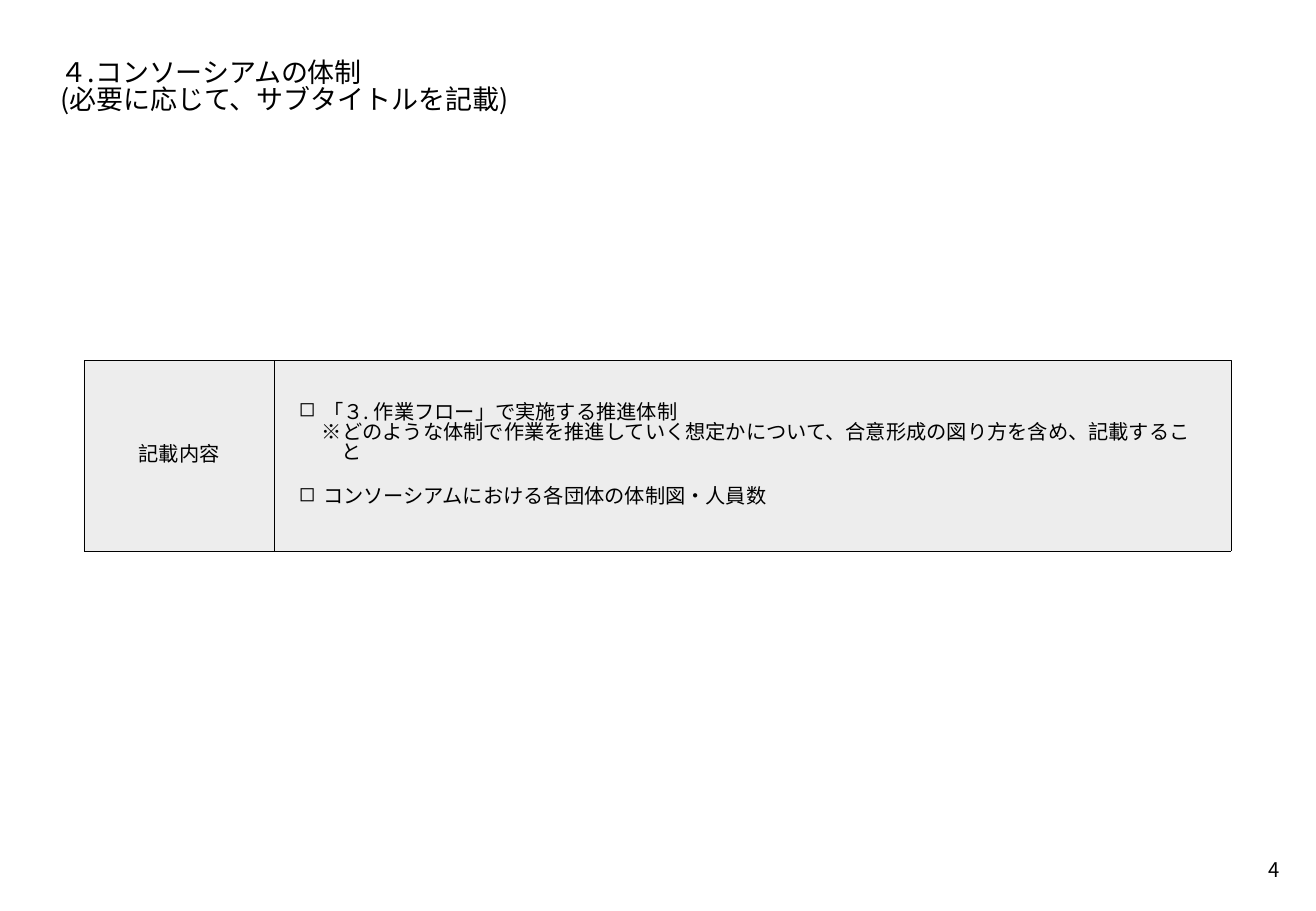
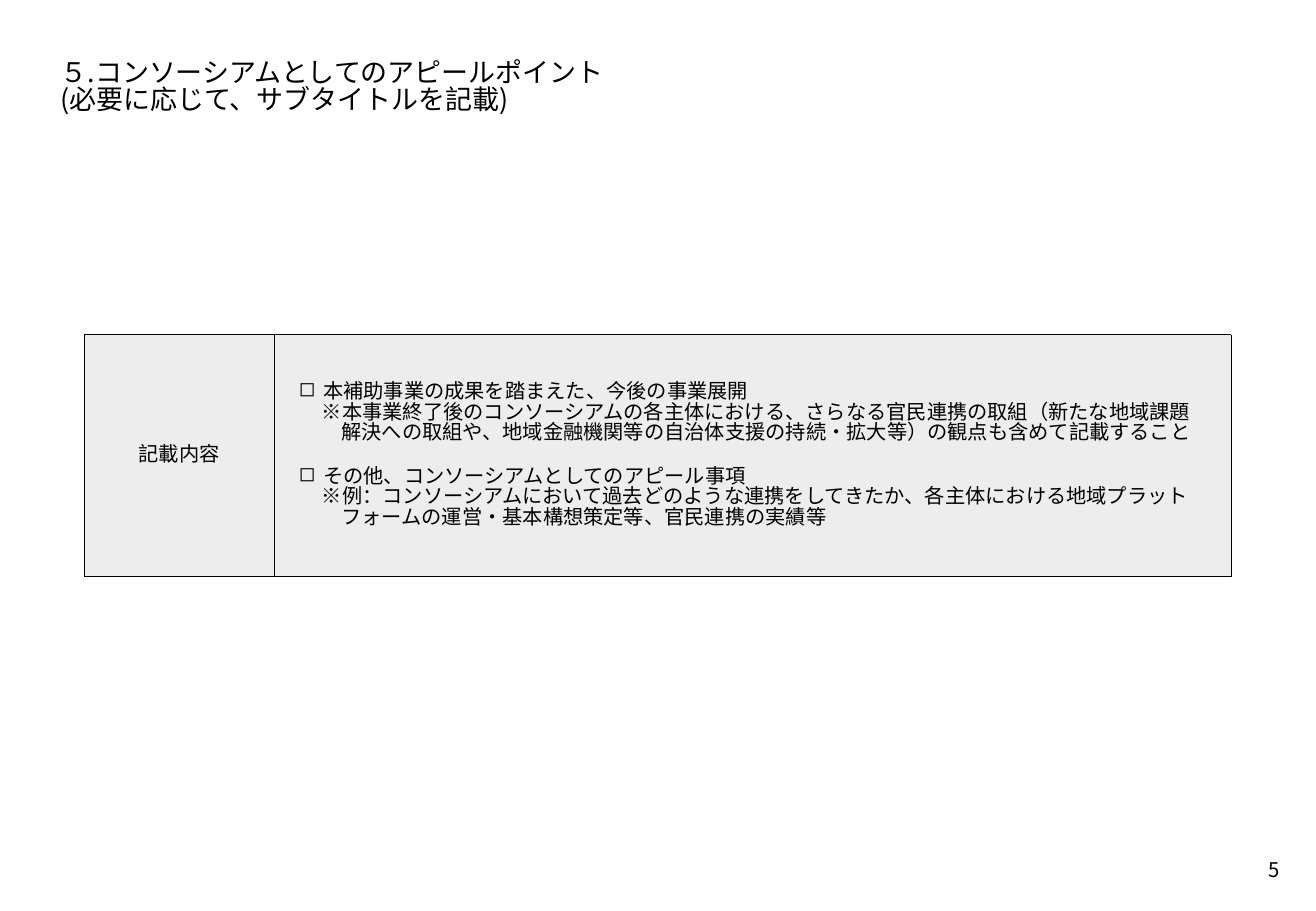
from lxml.etree import SubElement
from pptx import Presentation
from pptx.dml.color import RGBColor
from pptx.enum.dml import MSO_LINE
from pptx.enum.shapes import MSO_SHAPE
from pptx.enum.text import MSO_ANCHOR, MSO_AUTO_SIZE, PP_ALIGN
from pptx.oxml.ns import qn
from pptx.util import Pt

PX = 9144  # 100 px to the inch
FONT, INK, PANEL = "Noto Sans CJK JP", "000000", "EDEDED"
LINE_SPACING = 0.83
FIRST_NUMBER = 4
SUBTITLE = "(必要に応じて、サブタイトルを記載)"
LABEL = "記載内容"

# Each topic is a heading and an optional note
SLIDES = [
    {"title": "４.コンソーシアムの体制", "height": 157, "topics": [
        ("「３. 作業フロー」で実施する推進体制",
         "※どのような体制で作業を推進していく想定かについて、合意形成の図り方を含め、記載すること"),
        ("コンソーシアムにおける各団体の体制図・人員数", None),
    ]},
    {"title": "５.コンソーシアムとしてのアピールポイント", "height": 199, "topics": [
        ("本補助事業の成果を踏まえた、今後の事業展開",
         "※本事業終了後のコンソーシアムの各主体における、さらなる官民連携の取組"
         "（新たな地域課題解決への取組や、地域金融機関等の自治体支援の持続・拡大等）の観点も含めて記載すること"),
        ("その他、コンソーシアムとしてのアピール事項",
         "※例：コンソーシアムにおいて過去どのような連携をしてきたか、"
         "各主体における地域プラットフォームの運営・基本構想策定等、官民連携の実績等"),
    ]},
]

SLIDE_SIZE = (1083, 750)
TITLE_BOX = (30, 30, 1024, 79)
NUMBER_BOX = (1024, 699, 39, 39)
PANEL_LEFT, LABEL_WIDTH, CONTENT_WIDTH, PANEL_MIDDLE = 69, 157, 787, 375


def color(value):
    return RGBColor.from_string(value)


def set_frame(frame, inset, anchor, wrap=True):
    frame.margin_left = frame.margin_top = inset * PX
    frame.margin_right = frame.margin_bottom = inset * PX
    frame.vertical_anchor = anchor
    frame.auto_size = MSO_AUTO_SIZE.NONE
    frame.word_wrap = wrap


def style(paragraph, size=12, align=PP_ALIGN.LEFT, indent=None, bullet=None, before=0):
    paragraph.alignment = align
    paragraph.line_spacing = LINE_SPACING
    paragraph.space_before = Pt(before)
    properties = paragraph._p.get_or_add_pPr()
    if indent:
        properties.set("marL", str(indent[0] * PX))
        properties.set("indent", str(indent[1] * PX))
    if bullet:
        SubElement(properties, qn("a:buChar")).set("char", bullet)
    paragraph.font.size = Pt(size)
    paragraph.font.name = FONT
    paragraph.font.color.rgb = color(INK)
    # East Asian typeface
    defaults = properties.find(qn("a:defRPr"))
    SubElement(defaults, qn("a:ea")).set("typeface", FONT)


def add_title(slide, text):
    title = slide.shapes.title
    title.left, title.top, title.width, title.height = (n * PX for n in TITLE_BOX)
    set_frame(title.text_frame, 20, MSO_ANCHOR.TOP)
    title.text_frame.text = f"{text}\n{SUBTITLE}"
    for paragraph in title.text_frame.paragraphs:
        style(paragraph, size=16)


def add_number(slide, number):
    frame = slide.shapes.add_textbox(*(n * PX for n in NUMBER_BOX)).text_frame
    set_frame(frame, 10, MSO_ANCHOR.TOP, wrap=False)
    frame.text = str(number)
    style(frame.paragraphs[0], align=PP_ALIGN.RIGHT)


def add_cell(group, left, width, height, inset):
    top = PANEL_MIDDLE - height / 2
    box = (int(n * PX) for n in (left, top, width, height))
    cell = group.shapes.add_shape(MSO_SHAPE.RECTANGLE, *box)
    cell.shadow.inherit = False
    cell.fill.solid()
    cell.fill.fore_color.rgb = color(PANEL)
    cell.line.color.rgb = color(INK)
    cell.line.width = Pt(0.25)
    cell.line.dash_style = MSO_LINE.ROUND_DOT
    set_frame(cell.text_frame, inset, MSO_ANCHOR.MIDDLE)
    return cell.text_frame


def add_panel(slide, height, topics):
    group = slide.shapes.add_group_shape()
    content = add_cell(group, PANEL_LEFT + LABEL_WIDTH, CONTENT_WIDTH, height, 20)
    label = add_cell(group, PANEL_LEFT, LABEL_WIDTH, height, 5)
    label.text = LABEL
    style(label.paragraphs[0], align=PP_ALIGN.CENTER)

    for index, (heading, note) in enumerate(topics):
        paragraph = content.add_paragraph() if index else content.paragraphs[0]
        paragraph.text = heading
        style(paragraph, indent=(20, -20), bullet="◻", before=14.4 if index else 0)
        if note:
            paragraph = content.add_paragraph()
            paragraph.text = note
            style(paragraph, indent=(35, -16))


def main():
    presentation = Presentation()
    presentation.slide_width, presentation.slide_height = (n * PX for n in SLIDE_SIZE)
    for number, content in enumerate(SLIDES, FIRST_NUMBER):
        slide = presentation.slides.add_slide(presentation.slide_layouts[5])
        add_title(slide, content["title"])
        add_number(slide, number)
        add_panel(slide, content["height"], content["topics"])
    presentation.save("out.pptx")


if __name__ == "__main__":
    main()
